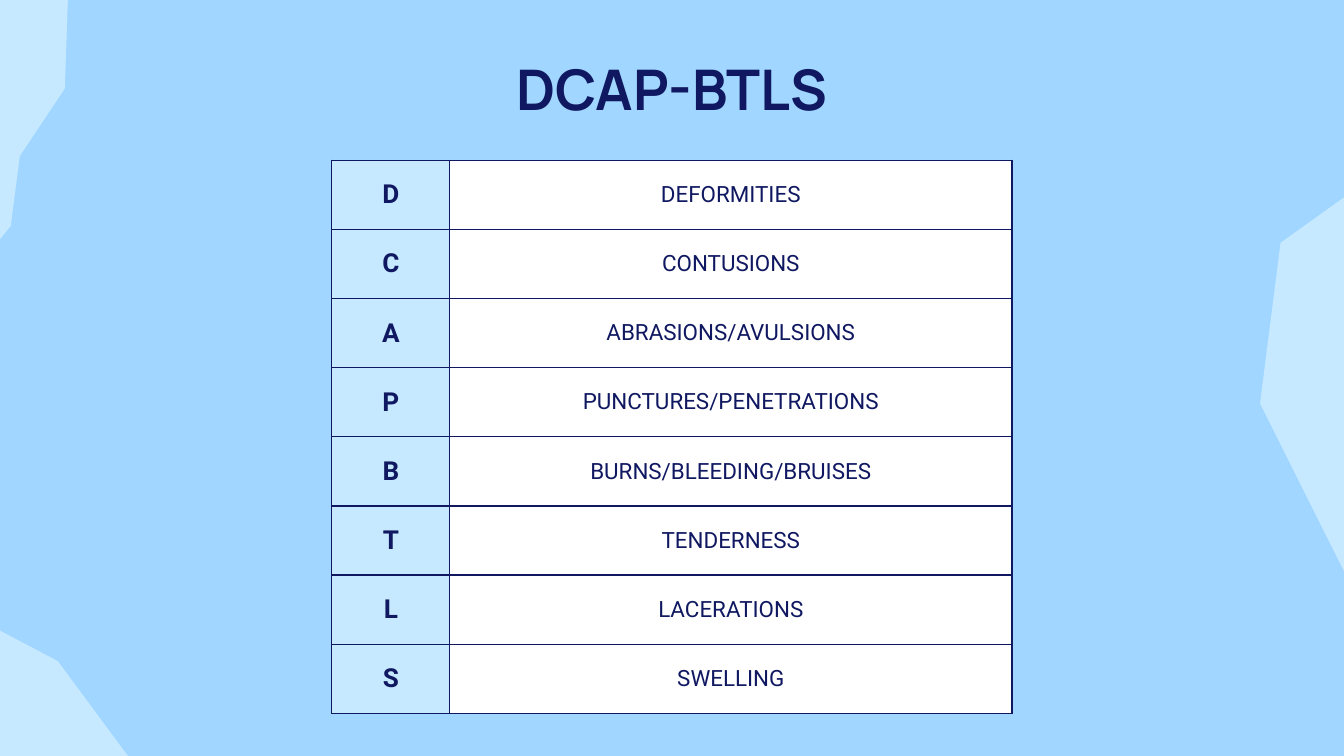
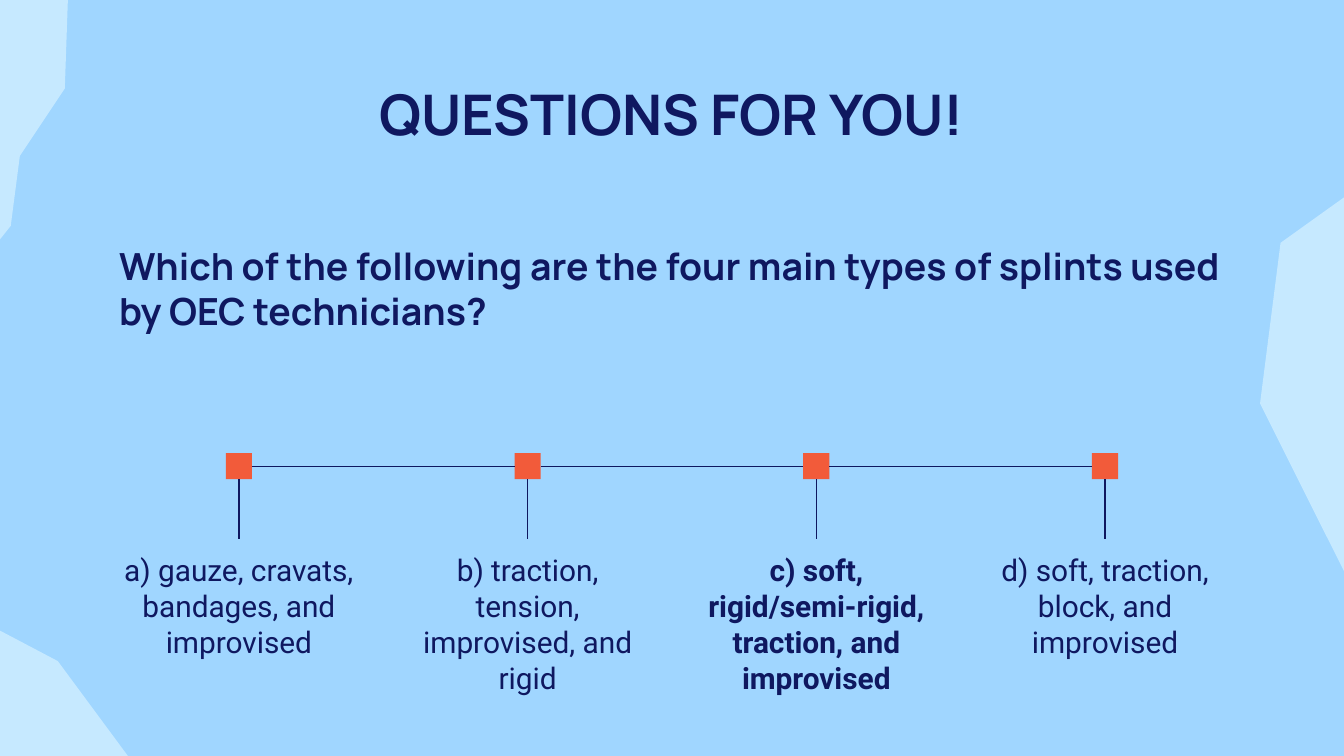
from lxml import etree
from pptx import Presentation
from pptx.dml.color import RGBColor
from pptx.enum.shapes import MSO_CONNECTOR, MSO_SHAPE
from pptx.enum.text import MSO_ANCHOR, PP_ALIGN
from pptx.oxml.ns import qn
from pptx.util import Pt

LEFT, CENTER = PP_ALIGN.LEFT, PP_ALIGN.CENTER
TOP, MIDDLE = MSO_ANCHOR.TOP, MSO_ANCHOR.MIDDLE
STRAIGHT, RECTANGLE = MSO_CONNECTOR.STRAIGHT, MSO_SHAPE.RECTANGLE

COLORS = {
    "sky": "A0D6FF",
    "ice": "C6E9FF",
    "navy": "0F1860",
    "orange": "F25B3A",
    "white": "FFFFFF",
}
HEADING_FONT, BODY_FONT = "Manrope", "Roboto"
SLIDE_WIDTH, SLIDE_HEIGHT = 720, 405
MARGIN = 56.7
CONTENT_WIDTH = SLIDE_WIDTH - 2 * MARGIN
INSET = 7.2
LINE_WIDTH = 0.75

ICE_BLOCKS = [
    [(-5.8, 334.8), (31, 354.2), (72, 409.7), (-33.1, 409.7), (-33.1, 355.7)],
    [(36.7, -8.6), (34.8, 47.4), (10.7, 83.5), (5.8, 121), (-13.7, 145.4), (-33.1, 0.7)],
    [(743, 89.3), (686, 130.1), (675, 216.2), (722.9, 311.8), (750.2, 311.8), (750.2, 89.3)],
]
INJURY_SIGNS = [
    ("D", "DEFORMITIES"),
    ("C", "CONTUSIONS"),
    ("A", "ABRASIONS/AVULSIONS"),
    ("P", "PUNCTURES/PENETRATIONS"),
    ("B", "BURNS/BLEEDING/BRUISES"),
    ("T", "TENDERNESS"),
    ("L", "LACERATIONS"),
    ("S", "SWELLING"),
]
ANSWERS = [
    ("a) gauze, cravats, bandages, and improvised", False),
    ("b) traction, tension, improvised, and rigid", False),
    ("c) soft, rigid/semi-rigid, traction, and improvised", True),
    ("d) soft, traction, block, and improvised", False),
]


def color(name):
    return RGBColor.from_string(COLORS[name])


def paint(shape, name):
    shape.fill.solid()
    shape.fill.fore_color.rgb = color(name)
    shape.line.fill.background()
    shape.shadow.inherit = False


def write(frame, text, font, size, bold=False, align=CENTER):
    paragraph = frame.paragraphs[0]
    paragraph.alignment = align
    run = paragraph.add_run()
    run.text = text
    run.font.name = font
    run.font.size = Pt(size)
    run.font.bold = bold
    run.font.color.rgb = color("navy")


def add_text(slide, box, text, font, size, bold=False, align=CENTER, anchor=TOP):
    frame = slide.shapes.add_textbox(*map(Pt, box)).text_frame
    frame.word_wrap = True
    frame.vertical_anchor = anchor
    frame.margin_left = frame.margin_right = Pt(INSET)
    frame.margin_top = frame.margin_bottom = Pt(INSET)
    write(frame, text, font, size, bold, align)


def add_line(slide, *ends):
    connector = slide.shapes.add_connector(STRAIGHT, *map(Pt, ends))
    connector.line.color.rgb = color("navy")
    connector.line.width = Pt(LINE_WIDTH)
    properties = connector._element.spPr
    etree.SubElement(properties, qn("a:effectLst"))


def add_base_slide(presentation, title, title_top):
    slide = presentation.slides.add_slide(presentation.slide_layouts[6])
    for start, *others in ICE_BLOCKS:
        builder = slide.shapes.build_freeform(*map(Pt, start))
        builder.add_line_segments([(Pt(x), Pt(y)) for x, y in others])
        paint(builder.convert_to_shape(), "ice")
    add_text(slide, (MARGIN, title_top, CONTENT_WIDTH, 51), title,
             HEADING_FONT, 30, True, anchor=MIDDLE)
    return slide


def add_cell_borders(cell):
    properties = cell._tc.get_or_add_tcPr()
    for side in ("lnL", "lnR", "lnT", "lnB"):
        line = etree.SubElement(properties, qn(f"a:{side}"), w=str(Pt(LINE_WIDTH)))
        fill = etree.SubElement(line, qn("a:solidFill"))
        etree.SubElement(fill, qn("a:srgbClr"), val=COLORS["navy"])


def fill_cell(cell, text, background, size, bold, side_margin):
    add_cell_borders(cell)
    cell.fill.solid()
    cell.fill.fore_color.rgb = color(background)
    cell.vertical_anchor = MIDDLE
    cell.margin_left = cell.margin_right = Pt(side_margin)
    cell.margin_top = cell.margin_bottom = 0
    write(cell.text_frame, text, BODY_FONT, size, bold)


def add_signs_table(slide, left, top, width, height):
    letter_width = 63.2
    row_count = len(INJURY_SIGNS)
    table = slide.shapes.add_table(
        row_count, 2, Pt(left), Pt(top), Pt(width), Pt(height)).table
    table.first_row = table.horz_banding = False
    table.columns[0].width = Pt(letter_width)
    table.columns[1].width = Pt(width - letter_width)
    for row, (letter, sign) in enumerate(INJURY_SIGNS):
        table.rows[row].height = Pt(height / row_count)
        fill_cell(table.cell(row, 0), letter, "ice", 14, True, INSET)
        fill_cell(table.cell(row, 1), sign, "white", 12, False, 0)


def add_answer_line(slide, left, top, width):
    marker, answer_width, answer_height, stem = 14, 142.6, 58.3, 31.8
    pitch = (width - answer_width) / (len(ANSWERS) - 1)
    middle = top + marker / 2
    answer_top = top + marker + stem
    for index, (answer, correct) in enumerate(ANSWERS):
        answer_left = left + index * pitch
        center = answer_left + answer_width / 2
        square = slide.shapes.add_shape(
            RECTANGLE, Pt(center - marker / 2), Pt(top), Pt(marker), Pt(marker))
        paint(square, "orange")
        add_text(slide, (answer_left, answer_top, answer_width, answer_height),
                 answer, BODY_FONT, 16, correct)
        add_line(slide, center, top + marker, center, answer_top)
        if index:
            add_line(slide, center - pitch + marker / 2, middle,
                     center - marker / 2, middle)


def build_table_slide(presentation):
    slide = add_base_slide(presentation, "DCAP-BTLS", 21.6)
    add_signs_table(slide, 177.8, 85.8, 364.4, 296.4)


def build_question_slide(presentation):
    slide = add_base_slide(presentation, "QUESTIONS FOR YOU!", 35.3)
    add_answer_line(slide, MARGIN, 242.8, CONTENT_WIDTH)
    add_text(slide, (MARGIN, 123.1, CONTENT_WIDTH, 58.3),
             "Which of the following are the four main types of splints used by OEC technicians?",
             HEADING_FONT, 20, True, LEFT)


def main():
    presentation = Presentation()
    presentation.slide_width = Pt(SLIDE_WIDTH)
    presentation.slide_height = Pt(SLIDE_HEIGHT)
    background = presentation.slide_master.background.fill
    background.solid()
    background.fore_color.rgb = color("sky")
    build_table_slide(presentation)
    build_question_slide(presentation)
    presentation.save("out.pptx")


if __name__ == "__main__":
    main()
